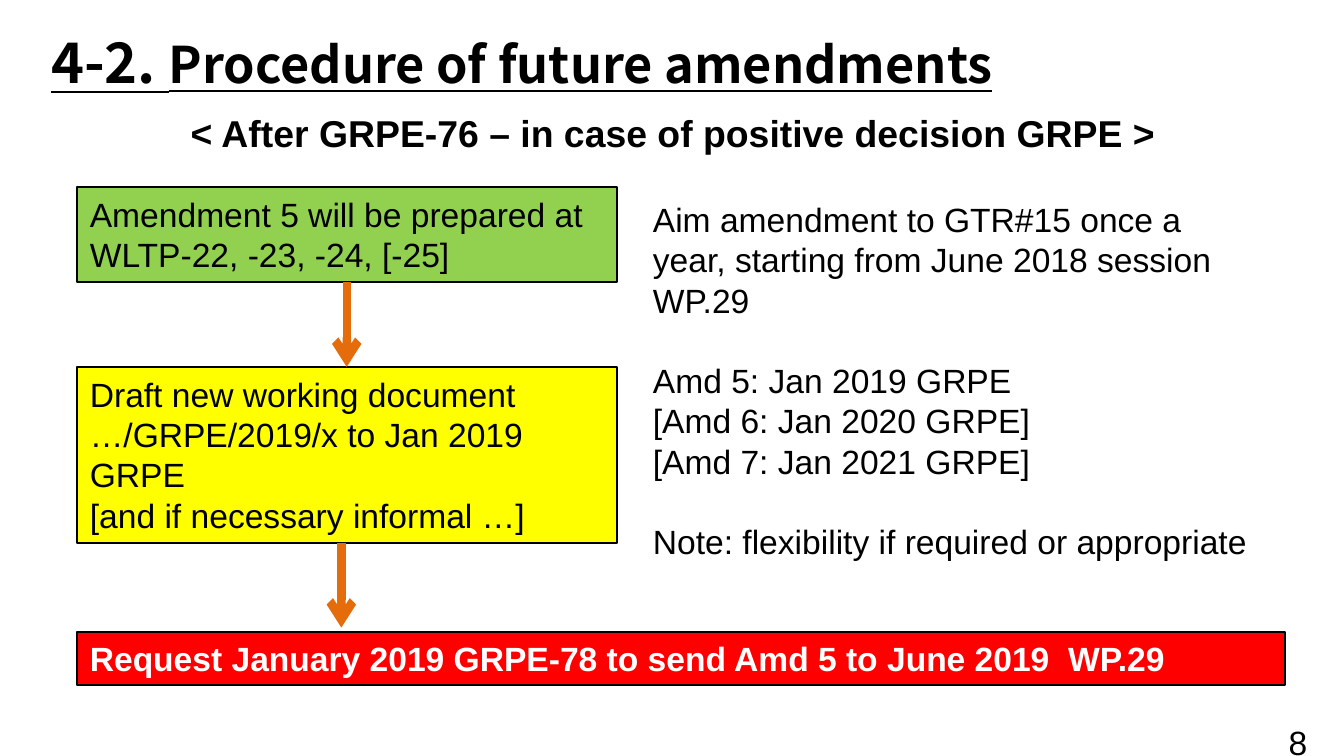
from lxml import etree
from pptx import Presentation
from pptx.dml.color import RGBColor as RGB
from pptx.enum.shapes import MSO_CONNECTOR as LINK, MSO_SHAPE as SHAPE
from pptx.enum.text import MSO_ANCHOR as ANCHOR, PP_ALIGN as ALIGN
from pptx.oxml.ns import qn
from pptx.util import Inches, Pt

BLACK = RGB(0x00, 0x00, 0x00)
WHITE = RGB(0xFF, 0xFF, 0xFF)
GREEN = RGB(0x92, 0xD0, 0x50)
YELLOW = RGB(0xFF, 0xFF, 0x00)
RED = RGB(0xFF, 0x00, 0x00)
ORANGE = RGB(0xE4, 0x6C, 0x0A)
HEAD = "Noto Sans CJK JP"
BODY = "Arial"
GAP = Pt(21.5)  # one line of body text


def style(par, size, color=BLACK, bold=False, name=BODY):
    par.alignment = ALIGN.LEFT
    font = par.font
    font.name, font.size, font.bold = name, Pt(size), bold
    font.color.rgb = color


def write(frame, lines, size=18, color=BLACK, bold=False):
    frame.word_wrap = True
    frame.vertical_anchor = ANCHOR.TOP
    for i, line in enumerate(lines):
        par = frame.paragraphs[0] if i == 0 else frame.add_paragraph()
        par.text = line
        style(par, size, color, bold)


def add_title(slide, x, y, w, h):
    title = slide.shapes.title
    title.left, title.top, title.width, title.height = map(Inches, (x, y, w, h))
    frame = title.text_frame
    frame.word_wrap = True
    frame.vertical_anchor = ANCHOR.MIDDLE
    frame.margin_top = frame.margin_bottom = 0
    par = frame.paragraphs[0]
    style(par, 30, bold=True, name=HEAD)
    par.font.underline = True
    for text, size in (("4-2. ", 30), ("Procedure of future amendments", 27)):
        run = par.add_run()
        run.text = text
        run.font.size = Pt(size)


def add_text(slide, x, y, w, h, lines, **look):
    box = slide.shapes.add_textbox(*map(Inches, (x, y, w, h)))
    write(box.text_frame, lines, **look)
    return box.text_frame


def add_step(slide, x, y, w, h, fill, lines, **look):
    box = slide.shapes.add_shape(SHAPE.RECTANGLE, *map(Inches, (x, y, w, h)))
    box.shadow.inherit = False
    box.fill.solid()
    box.fill.fore_color.rgb = fill
    box.line.color.rgb = BLACK
    box.line.width = Pt(1)
    write(box.text_frame, lines, **look)


def add_arrow(slide, x, y, drop):
    link = slide.shapes.add_connector(
        LINK.STRAIGHT, *map(Inches, (x, y, x, y + drop)))
    link.line.color.rgb = ORANGE
    link.line.width = Pt(4.5)
    etree.SubElement(link.line._get_or_add_ln(), qn("a:tailEnd"), type="arrow")
    etree.SubElement(link._element.spPr, qn("a:effectLst"))


def add_flow(slide, x, y, w, full):
    """Three steps joined by arrows; the last step has the full width."""
    add_step(slide, x, y, w, 0.71, GREEN,
             ["Amendment 5 will be prepared at WLTP-22, -23, -24, [-25]"])
    add_step(slide, x, y + 1.34, w, 1.31, YELLOW,
             ["Draft new working document …/GRPE/2019/x to Jan 2019 GRPE",
              "[and if necessary informal …]"])
    add_step(slide, x, y + 3.31, full, 0.4, RED,
             ["Request January 2019 GRPE-78 to send Amd 5 to June 2019  WP.29"],
             color=WHITE, bold=True)
    add_arrow(slide, x + w / 2, y + 0.71, 0.63)
    add_arrow(slide, x + w / 2 - 0.04, y + 2.65, 0.63)


def add_plan(slide, x, y, w, h):
    frame = add_text(slide, x, y, w, h, [
        "Aim amendment to GTR#15 once a year, starting from June 2018 session WP.29",
        "Amd 5: Jan 2019 GRPE",
        "[Amd 6: Jan 2020 GRPE]",
        "[Amd 7: Jan 2021 GRPE]",
        "Note: flexibility if required or appropriate"])
    for i in (1, 4):  # start of each new group
        frame.paragraphs[i].space_before = GAP


def main():
    deck = Presentation()
    deck.slide_width = Inches(10)
    deck.slide_height = deck.slide_width * 9 // 16
    slide = deck.slides.add_slide(deck.slide_layouts[5])
    # Heading
    add_title(slide, 0.28, 0.15, 7.93, 0.61)
    add_text(slide, 1.32, 0.77, 7.71, 0.44,
             ["< After GRPE-76 – in case of positive decision GRPE >"],
             size=20, bold=True)
    # Steps on the left, schedule on the right
    add_flow(slide, 0.57, 1.39, 4.02, 8.99)
    add_plan(slide, 4.76, 1.43, 4.64, 2.91)
    # Page number
    add_text(slide, 9.49, 5.32, 0.51, 0.4, ["8"])
    deck.save("out.pptx")


if __name__ == "__main__":
    main()
